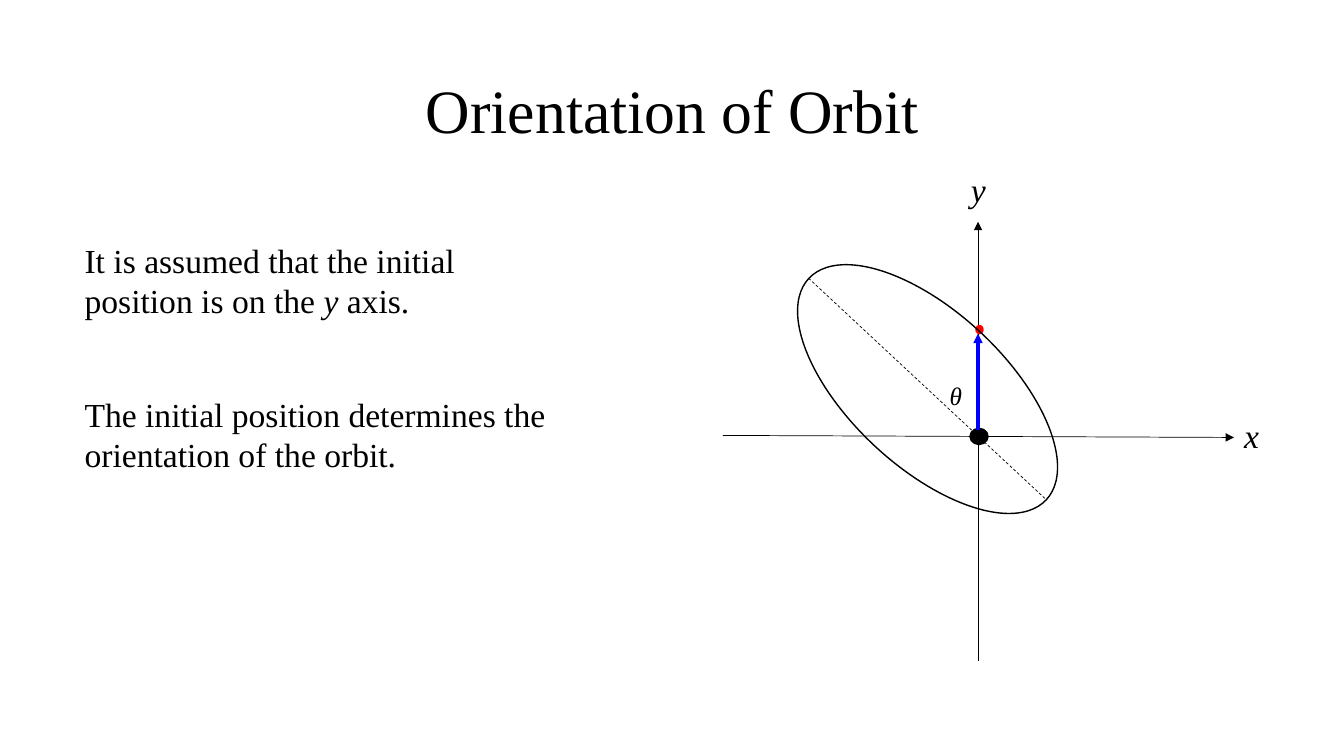
from lxml import etree
from pptx import Presentation
from pptx.dml.color import RGBColor
from pptx.enum import dml, shapes, text
from pptx.oxml import ns
from pptx.util import Inches, Pt

FONT = "Times New Roman"
BLACK, RED, BLUE = "000000", "FF0000", "0000FF"
ORIGIN_X = 9.7


def color(hex_value):
    return RGBColor.from_string(hex_value)


def write(paragraph, content, size=24, italic=False):
    run = paragraph.add_run()
    run.text = content
    run.font.name = FONT
    run.font.size = Pt(size)
    run.font.italic = italic
    run.font.color.rgb = color(BLACK)


def add_text(slide, box, lines, **style):
    """Each line is a list of (text, italic) pieces."""
    frame = slide.shapes.add_textbox(*map(Inches, box)).text_frame
    frame.word_wrap = False
    frame.auto_size = text.MSO_AUTO_SIZE.SHAPE_TO_FIT_TEXT
    for index, pieces in enumerate(lines):
        paragraph = frame.add_paragraph() if index else frame.paragraphs[0]
        for content, italic in pieces:
            write(paragraph, content, italic=italic, **style)


def add_ellipse(slide, box, line, fill=None, rotation=0):
    ellipse = slide.shapes.add_shape(shapes.MSO_SHAPE.OVAL, *map(Inches, box))
    ellipse.shadow.inherit = False
    ellipse.rotation = rotation
    ellipse.line.color.rgb = color(line)
    ellipse.line.width = Pt(1)
    if fill:
        ellipse.fill.solid()
        ellipse.fill.fore_color.rgb = color(fill)
    else:
        ellipse.fill.background()


def add_line(slide, start, end, line=BLACK, width=0.5, dashed=False, arrow=False):
    connector = slide.shapes.add_connector(
        shapes.MSO_CONNECTOR.STRAIGHT, *map(Inches, start + end))
    connector.line.color.rgb = color(line)
    connector.line.width = Pt(width)
    if dashed:
        connector.line.dash_style = dml.MSO_LINE.DASH
    if arrow:
        outline = connector.line._get_or_add_ln()
        etree.SubElement(outline, ns.qn("a:tailEnd"), type="triangle")
    etree.SubElement(connector._element.spPr, ns.qn("a:effectLst"))


def add_title(slide, content):
    title = slide.shapes.title
    title.left, title.top, title.width, title.height = map(
        Inches, (0.92, 0.4, 11.5, 1.45))
    title.text_frame.vertical_anchor = text.MSO_ANCHOR.MIDDLE
    heading = title.text_frame.paragraphs[0]
    heading.alignment = text.PP_ALIGN.CENTER
    heading.line_spacing = 0.9
    write(heading, content, size=44)


def main():
    prs = Presentation()
    prs.slide_width, prs.slide_height = Inches(13.33), Inches(7.5)
    slide = prs.slides.add_slide(prs.slide_layouts[5])
    add_title(slide, "Orientation of Orbit")

    # Explanation
    add_text(slide, (0.74, 2.33, 4.05, 0.91), [
        [("It is assumed that the initial", False)],
        [("position is on the ", False), ("y", True), (" axis.", False)]])
    add_text(slide, (0.74, 3.86, 4.81, 0.91), [
        [("The initial position determines the", False)],
        [("orientation of the orbit.", False)]])

    # Axes and their names
    add_line(slide, (7.17, 4.32), (12.24, 4.34), arrow=True)
    add_line(slide, (ORIGIN_X, 6.56), (ORIGIN_X, 2.2), arrow=True)
    add_text(slide, (12.24, 4.07, 0.35, 0.5), [[("x", True)]])
    add_text(slide, (9.53, 1.63, 0.35, 0.5), [[("y", True)]])

    # Initial position, orbit with its major axis, central body
    add_ellipse(slide, (9.68, 3.23, 0.07, 0.08), RED, fill=RED)
    add_ellipse(slide, (8.43, 2.25, 1.54, 3.22), BLACK, rotation=313)
    add_line(slide, (8.02, 2.76), (10.37, 4.95), dashed=True)
    add_ellipse(slide, (9.62, 4.25, 0.18, 0.16), BLACK, fill=BLACK)

    # Position vector and orientation angle
    add_line(slide, (ORIGIN_X, 4.27), (ORIGIN_X, 3.31), BLUE, 2.25, arrow=True)
    add_text(slide, (9.32, 3.72, 0.33, 0.4), [[("θ", True)]], size=18)

    prs.save("out.pptx")


if __name__ == "__main__":
    main()
